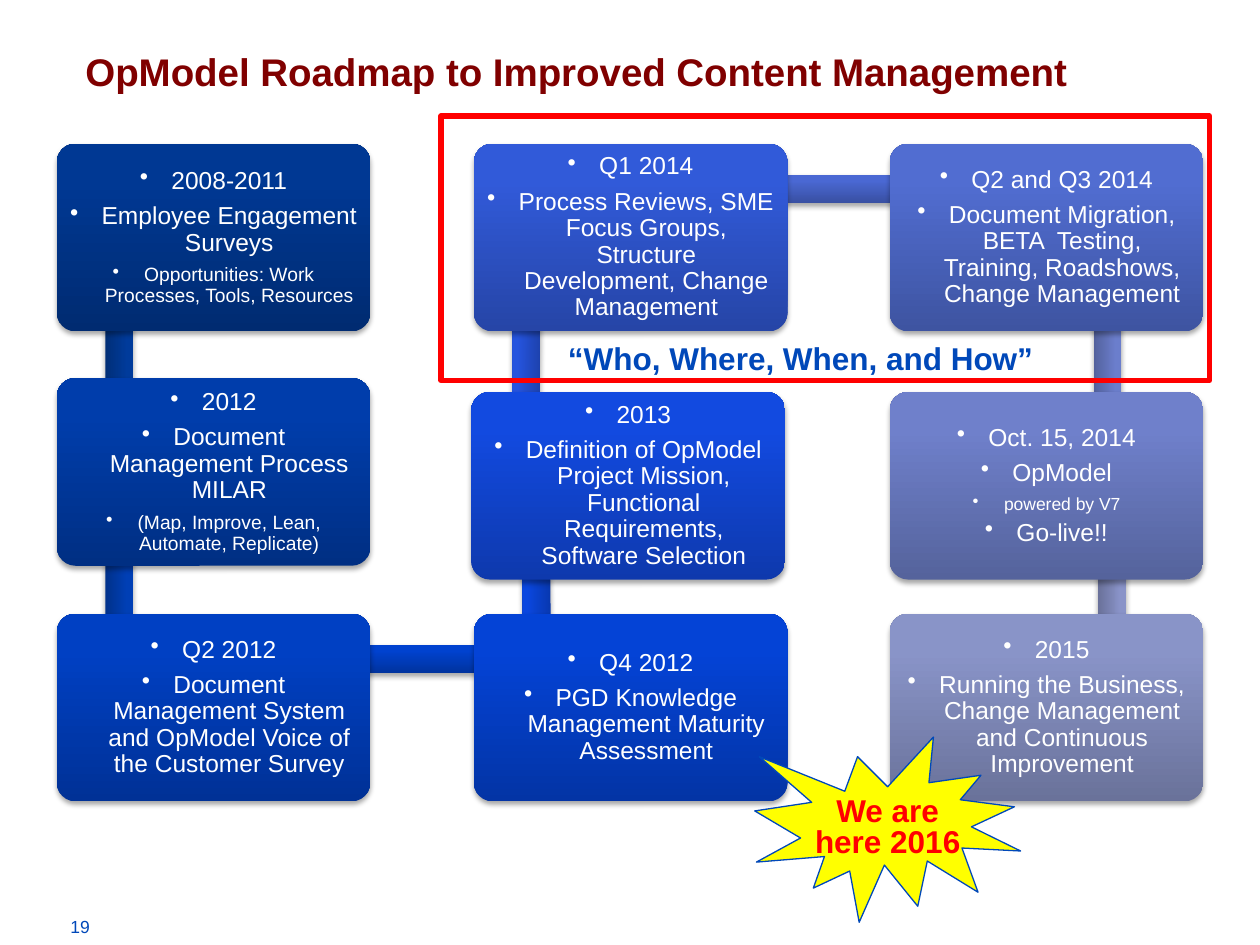
from lxml import etree
from pptx import Presentation
from pptx.dml.color import RGBColor
from pptx.enum.shapes import MSO_SHAPE
from pptx.enum.text import MSO_ANCHOR, PP_ALIGN
from pptx.oxml.ns import qn
from pptx.util import Inches, Pt

RECT = MSO_SHAPE.RECTANGLE
ROUND = MSO_SHAPE.ROUNDED_RECTANGLE
BURST = MSO_SHAPE.EXPLOSION1
MIDDLE = MSO_ANCHOR.MIDDLE
TOP = MSO_ANCHOR.TOP
LEFT = PP_ALIGN.LEFT
CENTER = PP_ALIGN.CENTER


def color(code):
    return RGBColor.from_string(code)


class Deck:
    font = "Arial"
    blue = "0048B9"
    red = "FF0000"
    white = "FFFFFF"
    box_w, box_h = 2.49, 1.49
    bar_h = 0.22
    inset = 0.06
    indent = 0.25

    def __init__(self):
        self.prs = Presentation()
        self.prs.slide_width = Inches(10)
        self.prs.slide_height = Inches(7.5)
        self.slide = self.prs.slides.add_slide(self.prs.slide_layouts[6])

    def shape(self, kind, x, y, w, h, fill=None, line=None, width=1):
        item = self.slide.shapes.add_shape(
            kind, Inches(x), Inches(y), Inches(w), Inches(h))
        item.shadow.inherit = False
        if fill:
            item.fill.solid()
            item.fill.fore_color.rgb = color(fill)
        else:
            item.fill.background()
        if line:
            item.line.color.rgb = color(line)
            item.line.width = Pt(width)
        else:
            item.line.fill.background()
        return item

    def shade(self, item, dark, light):
        item.fill.gradient()
        item.fill.gradient_angle = 90
        stops = item.fill.gradient_stops
        for stop, place, code in zip(stops, (0, 0.8), (dark, light)):
            stop.position = place
            stop.color.rgb = color(code)
        effects = item._element.spPr.find(qn("a:effectLst"))
        glow = etree.SubElement(
            effects, qn("a:outerShdw"), blurRad=str(Pt(3.1)),
            dist=str(Pt(1.8)), dir="5400000", rotWithShape="0")
        tint = etree.SubElement(glow, qn("a:srgbClr"), val="000000")
        etree.SubElement(tint, qn("a:alpha"), val="35000")

    def run(self, para, words, size, code, bold=False):
        run = para.add_run()
        run.text = words
        run.font.name = self.font
        run.font.size = Pt(size)
        run.font.bold = bold
        run.font.color.rgb = color(code)

    def bar(self, x, y, w, turn, dark, light):
        item = self.shape(RECT, x, y, w, self.bar_h)
        item.rotation = turn
        self.shade(item, dark, light)

    def box(self, x, y, dark, light, lines):
        item = self.shape(ROUND, x, y, self.box_w, self.box_h)
        item.adjustments[0] = 0.1
        self.shade(item, dark, light)
        frame = item.text_frame
        frame.word_wrap = True
        frame.vertical_anchor = MIDDLE
        frame.margin_left = frame.margin_right = Inches(self.inset)
        frame.margin_top = frame.margin_bottom = Inches(self.inset)
        for i, (words, size) in enumerate(lines):
            para = frame.add_paragraph() if i else frame.paragraphs[0]
            para.alignment = CENTER
            para.line_spacing = 0.9
            para.space_after = Pt(size * 0.35)
            props = para._p.get_or_add_pPr()
            props.set("marL", str(Inches(self.indent)))
            props.set("indent", str(-Inches(self.indent)))
            etree.SubElement(props, qn("a:buChar"), char="•")
            self.run(para, words, size, self.white)

    def text(self, x, y, w, h, words, size, code,
             bold=True, align=LEFT, space=0.8):
        item = self.slide.shapes.add_textbox(
            Inches(x), Inches(y), Inches(w), Inches(h))
        frame = item.text_frame
        frame.word_wrap = True
        frame.vertical_anchor = TOP
        para = frame.paragraphs[0]
        para.alignment = align
        para.line_spacing = space
        self.run(para, words, size, code, bold)


COLS = (0.45, 3.76, 7.06)
TOP_Y, LOW_Y, MID_Y = 1.14, 4.87, 3.11

STEPS = [
    ((0.02, 2.33, 1.85, 90, "002E77", "003B9B"),
     (COLS[0], TOP_Y, "002B71", "003893"),
     [("2008-2011", 14), ("Employee Engagement Surveys", 14),
      ("Opportunities: Work Processes, Tools, Resources", 11)]),
    ((0.02, 4.19, 1.85, 90, "00318B", "003FB5"),
     (COLS[0], 3, "002F83", "003DAB"),
     [("2012", 14), ("Document Management Process MILAR", 14),
      ("(Map, Improve, Lean, Automate, Replicate)", 11)]),
    ((0.96, 5.12, 3.3, 0, "00339F", "0042CF"),
     (COLS[0], LOW_Y, "003196", "0040C3"),
     [("Q2 2012", 14),
      ("Document Management System and OpModel Voice of "
       "the Customer Survey", 14)]),
    ((3.38, 4.24, 1.75, 269.4, "0837AC", "0A47DF"),
     (COLS[1], LOW_Y, "0334A5", "0443D6"),
     [("Q4 2012", 14),
      ("PGD Knowledge Management Maturity Assessment", 14)]),
    ((3.2, 2.4, 1.96, 270.3, "1D41AB", "2554DE"),
     (3.74, MID_Y, "0E39AD", "124AE0"),
     [("2013", 14),
      ("Definition of OpModel Project Mission, Functional "
       "Requirements, Software Selection", 14)]),
    ((4.26, 1.39, 3.3, 0, "3950A3", "4A68D3"),
     (COLS[1], TOP_Y, "2645A7", "315AD9"),
     [("Q1 2014", 14),
      ("Process Reviews, SME Focus Groups, Structure "
       "Development, Change Management", 14)]),
    ((7.81, 2.38, 1.96, 90, "53619D", "6B7ECC"),
     (COLS[2], TOP_Y, "3E54A1", "516DD1"),
     [("Q2 and Q3 2014", 14),
      ("Document Migration, BETA  Testing, Training, "
       "Roadshows, Change Management", 14)]),
    ((7.95, 4.24, 1.75, 90, "6A719A", "8993C8"),
     (COLS[2], MID_Y, "55639C", "6F80CB"),
     [("Oct. 15, 2014", 14), ("OpModel", 14),
      ("powered by V7", 10), ("Go-live!!", 14)]),
    (None,
     (COLS[2], LOW_Y, "6A729A", "8994C8"),
     [("2015", 14),
      ("Running the Business, Change Management and "
       "Continuous Improvement", 14)]),
]


def main():
    deck = Deck()
    deck.text(0.46, 7.22, 2.31, 0.27, "19", 10, deck.blue,
              bold=False, space=1)
    for bar, box, lines in STEPS:
        if bar:
            deck.bar(*bar)
        deck.box(*box, lines)
    deck.shape(RECT, 3.5, 0.92, 6.1, 2.1, line=deck.red, width=3)
    deck.shape(BURST, 5.99, 5.85, 2.11, 1.47, "FFFF00", deck.blue, 0.75)
    deck.text(6.35, 6.29, 1.39, 0.59, "We are here 2016", 18, deck.red,
              align=CENTER)
    deck.text(0.58, 0.4, 9.03, 0.4,
              "OpModel Roadmap to Improved Content Management",
              22, "800000")
    deck.text(4.41, 2.7, 4.5, 0.34, "“Who, Where, When, and How”",
              18, deck.blue)
    deck.prs.save("out.pptx")


if __name__ == "__main__":
    main()
